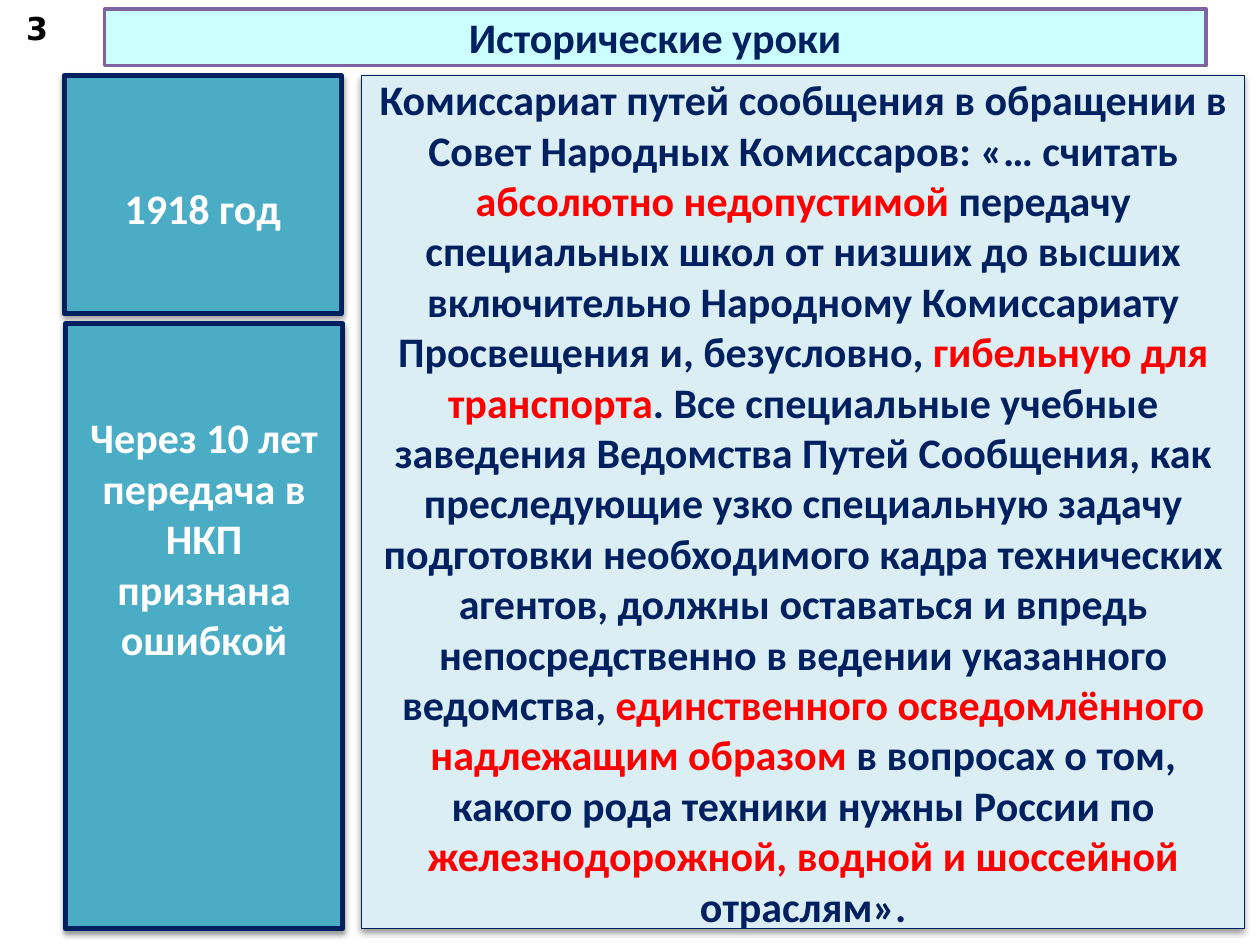
from lxml.etree import SubElement as Sub
from pptx import Presentation
from pptx.dml.color import RGBColor
from pptx.enum.shapes import MSO_SHAPE as Form
from pptx.enum.text import MSO_ANCHOR as Anchor, MSO_AUTO_SIZE as Fit, PP_ALIGN as Align
from pptx.oxml.ns import qn
from pptx.util import Inches, Pt

NAVY, RED, WHITE, TEAL = "002060", "FF0000", "FFFFFF", "4BACC6"


def tint(text):
    return RGBColor.from_string(text)


def shade(props, after=None):
    """Add a soft shadow that falls straight down."""
    fx = Sub(props, qn("a:effectLst"))
    cast = Sub(fx, qn("a:outerShdw"), blurRad="40000", dist="20000",
               dir="5400000", rotWithShape="0")
    hue = Sub(cast, qn("a:srgbClr"), val="000000")
    Sub(hue, qn("a:alpha"), val="38000")
    if after is not None:
        after.addnext(fx)


class Deck:
    """Style and current slide; lengths are cells of a 100 by 75 grid."""
    font, size = "Calibri", 24

    def __init__(self):
        self.prs = Presentation()
        self.prs.slide_width, self.prs.slide_height = Inches(10), Inches(7.5)
        self.cell = self.prs.slide_width / 100
        self.slide = self.prs.slides.add_slide(self.prs.slide_layouts[5])

    def place(self, *box):
        return [int(side * self.cell) for side in box]

    def label(self, shape, parts, font=None, size=None, anchor=Anchor.MIDDLE):
        frame = shape.text_frame
        frame.word_wrap, frame.auto_size = True, Fit.NONE
        frame.vertical_anchor = anchor
        para = frame.paragraphs[0]
        para.alignment = Align.CENTER
        para.font.name = font or self.font
        para.font.size = Pt(size or self.size)
        para.font.bold = True
        for text, hue in parts:
            run = para.add_run()
            run.text = text
            run.font.color.rgb = tint(hue)
        return frame

    def paint(self, shape, fill, line, width):
        shape.fill.solid()
        shape.fill.fore_color.rgb = tint(fill)
        shape.line.color.rgb = tint(line)
        shape.line.width = Pt(width)

    def title(self, box, text):
        head = self.slide.shapes.title
        head.left, head.top, head.width, head.height = self.place(*box)
        self.paint(head, "CCFFFF", "8064A2", 2)
        self.label(head, [(text, NAVY)])

    def panel(self, box, fill, width, parts, drop=None):
        """Draw a shadowed panel; drop starts its text that far from the top."""
        rect = self.slide.shapes.add_shape(Form.RECTANGLE, *self.place(*box))
        self.paint(rect, fill, NAVY, width)
        shade(rect._element.spPr)
        anchor = Anchor.MIDDLE if drop is None else Anchor.TOP
        frame = self.label(rect, parts, anchor=anchor)
        if drop is not None:
            frame.margin_top = int(drop * self.cell)

    def number(self, box, text):
        note = self.slide.shapes.add_textbox(*self.place(*box))
        frame = self.label(note, [(text, "000000")], "DejaVu Sans", 18)
        props = frame.paragraphs[0].runs[0]._r.get_or_add_rPr()
        shade(props, props.find(qn("a:solidFill")))


deck = Deck()
deck.title((8.3, 0.7, 87.4, 4.5), "Исторические уроки")

# Left column: the dates
deck.panel((5.1, 6, 22, 18.9), TEAL, 3, [("1918 год", WHITE)], 8.5)
deck.panel((5.2, 25.7, 22, 48), TEAL, 3,
           [("Через 10 лет передача в НКП признана ошибкой", WHITE)], 7)

# Right column: the quotation, with key words in red
deck.panel((28.7, 6, 70.1, 67.7), "DBEEF4", 0.75, [
    ("Комиссариат путей сообщения в обращении в Совет Народных Комиссаров: "
     "«… считать ", NAVY),
    ("абсолютно недопустимой ", RED),
    ("передачу специальных школ от низших до высших включительно Народному "
     "Комиссариату Просвещения и, безусловно, ", NAVY),
    ("гибельную для транспорта", RED),
    (". Все специальные учебные заведения Ведомства Путей Сообщения, как "
     "преследующие узко специальную задачу подготовки необходимого кадра "
     "технических агентов, должны оставаться и впредь непосредственно в "
     "ведении указанного ведомства, ", NAVY),
    ("единственного осведомлённого надлежащим образом ", RED),
    ("в вопросах о том, какого рода техники нужны России по ", NAVY),
    ("железнодорожной, водной и шоссейной ", RED),
    ("отраслям».", NAVY),
])

deck.number((0.4, 0.5, 5.1, 3.5), "3")
deck.prs.save("out.pptx")
